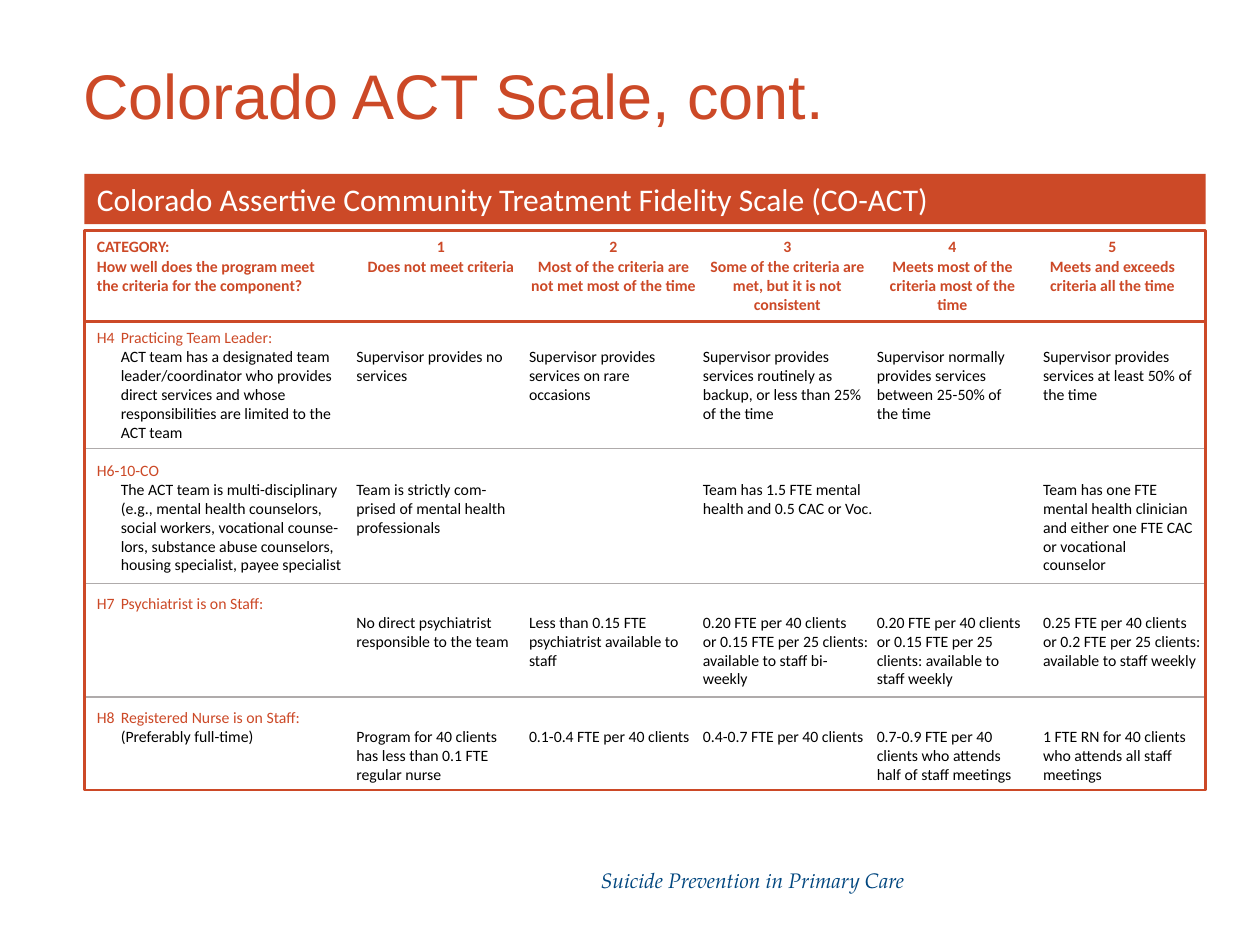
"""Build the Colorado ACT Scale slide with its tabbed fidelity table."""
from itertools import zip_longest

from lxml import etree
from pptx import Presentation
from pptx import util as u
from pptx.dml.color import RGBColor
from pptx.enum import shapes, text
from pptx.oxml.ns import qn

RUST = RGBColor(0xCC, 0x49, 0x27)
GRAY = RGBColor(0xAF, 0xAB, 0xAB)
NAVY = RGBColor(0x00, 0x46, 0x7F)
BLACK = RGBColor(0, 0, 0)
WHITE = RGBColor(255, 255, 255)

TITLE = "Colorado ACT Scale, cont."
BANNER = "Colorado Assertive Community Treatment Fidelity Scale (CO-ACT)"
FOOTER = "Suicide Prevention in Primary Care"
HEADER = [
    ["CATEGORY:", "How well does the program meet", "the criteria for the component?"],
    ["1", "Does not meet criteria"],
    ["2", "Most of the criteria are", "not met most of the time"],
    ["3", "Some of the criteria are", "met, but it is not", "consistent"],
    ["4", "Meets most of the", "criteria most of the", "time"],
    ["5", "Meets and exceeds", "criteria all the time"],
]
ITEMS = [
    ("H4\tPracticing Team Leader:", [
        ["ACT team has a designated team", "leader/coordinator who provides",
         "direct services and whose", "responsibilities are limited to the", "ACT team"],
        ["Supervisor provides no", "services"],
        ["Supervisor provides", "services on rare", "occasions"],
        ["Supervisor provides", "services routinely as", "backup, or less than 25%",
         "of the time"],
        ["Supervisor normally", "provides services", "between 25-50% of", "the time"],
        ["Supervisor provides", "services at least 50% of", "the time"],
    ]),
    ("H6-10-CO", [
        ["The ACT team is multi-disciplinary", "(e.g., mental health counselors,",
         "social workers, vocational counse-", "lors, substance abuse counselors,",
         "housing specialist, payee specialist"],
        ["Team is strictly com-", "prised of mental health", "professionals"],
        [],
        ["Team has 1.5 FTE mental", "health and 0.5 CAC or Voc."],
        [],
        ["Team has one FTE", "mental health clinician", "and either one FTE CAC",
         "or vocational", "counselor"],
    ]),
    ("H7\tPsychiatrist is on Staff:", [
        [],
        ["No direct psychiatrist", "responsible to the team"],
        ["Less than 0.15 FTE", "psychiatrist available to", "staff"],
        ["0.20 FTE per 40 clients", "or 0.15 FTE per 25 clients:",
         "available to staff bi-", "weekly"],
        ["0.20 FTE per 40 clients", "or 0.15 FTE per 25", "clients: available to",
         "staff weekly"],
        ["0.25 FTE per 40 clients", "or 0.2 FTE per 25 clients:",
         "available to staff weekly"],
    ]),
    ("H8\tRegistered Nurse is on Staff:", [
        ["(Preferably full-time)"],
        ["Program for 40 clients", "has less than 0.1 FTE", "regular nurse"],
        ["0.1-0.4 FTE per 40 clients"],
        ["0.4-0.7 FTE per 40 clients"],
        ["0.7-0.9 FTE per 40", "clients who attends", "half of staff meetings"],
        ["1 FTE RN for 40 clients", "who attends all staff", "meetings"],
    ]),
]
HEADER_TABS = [2.73, 4.1, 5.48, 6.79, 8.06]
ITEM_TABS = [0.19, 2.06, 3.43, 4.81, 6.19, 7.51]
LEFT, WIDTH = 0.67, 8.9
TABLE_TOP, TABLE_HEIGHT = 1.83, 4.44
HEADER_RULE, ITEM_RULES = 2.55, [3.56, 4.63, 5.53]


def tabbed_lines(columns):
    """Join the columns line by line with tabs."""
    return ["\t".join(cells).rstrip() for cells in zip_longest(*columns, fillvalue="")]


def style(p, size, color, font="Calibri", bold=None, italic=None):
    """Format every run of a paragraph."""
    for r in p.runs:
        f = r.font
        f.size, f.name, f.bold, f.italic = u.Pt(size), font, bold, italic
        f.color.rgb = color


def set_tabs(p, stops, align):
    """Give a paragraph its tab stops."""
    tabs = etree.SubElement(p._p.get_or_add_pPr(), qn("a:tabLst"))
    for stop in stops:
        etree.SubElement(tabs, qn("a:tab"), pos=str(u.Inches(stop)), algn=align)


def add_box(slide, left, top, width, height, wrap=True):
    """Add a text box and return its text frame."""
    tf = slide.shapes.add_textbox(*map(u.Inches, (left, top, width, height))).text_frame
    tf.word_wrap = wrap
    tf.auto_size = text.MSO_AUTO_SIZE.SHAPE_TO_FIT_TEXT
    return tf


def add_rect(slide, top, height):
    """Add a full-width rectangle without shadow."""
    sp = slide.shapes.add_shape(
        shapes.MSO_SHAPE.RECTANGLE, *map(u.Inches, (LEFT, top, WIDTH, height)))
    sp.shadow.inherit = False
    return sp


def add_rule(slide, y, color, weight):
    """Add a full-width horizontal line."""
    line = slide.shapes.add_connector(
        shapes.MSO_CONNECTOR.STRAIGHT, *map(u.Inches, (LEFT, y, LEFT + WIDTH, y)))
    line.line.color.rgb, line.line.width = color, u.Pt(weight)
    etree.SubElement(line._element.spPr, qn("a:effectLst"))


def add_title(slide):
    """Fill and place the title."""
    title = slide.shapes.title
    title.left, title.top, title.width, title.height = map(u.Inches, (0.56, 0.3, 8.9, 0.97))
    tf = title.text_frame
    tf.text, tf.vertical_anchor = TITLE, text.MSO_ANCHOR.MIDDLE
    p = tf.paragraphs[0]
    p.alignment, p.line_spacing = text.PP_ALIGN.LEFT, 0.9
    style(p, 36, RUST, "Arial")


def add_banner(slide):
    """Add the coloured heading bar."""
    sp = add_rect(slide, 1.38, 0.4)
    sp.fill.solid()
    sp.fill.fore_color.rgb = RUST
    sp.line.fill.background()
    tf = sp.text_frame
    tf.text, tf.vertical_anchor = BANNER, text.MSO_ANCHOR.TOP
    tf.word_wrap = True
    tf.paragraphs[0].alignment = text.PP_ALIGN.LEFT
    style(tf.paragraphs[0], 18, WHITE)


def add_header(slide):
    """Add the rating headings."""
    tf = add_box(slide, LEFT, TABLE_TOP, 8.79, 0.71)
    first, *rest = tabbed_lines(HEADER)
    for i, line in enumerate([first, "\n".join(rest)]):
        p = tf.add_paragraph() if i else tf.paragraphs[0]
        p.text, p.line_spacing = line, u.Pt(11)
        set_tabs(p, HEADER_TABS, "ctr")
        style(p, 9, RUST, bold=True)


def add_items(slide):
    """Add the scale items, one label and its tabbed lines each."""
    tf = add_box(slide, LEFT, HEADER_RULE, 8.99, 3.89)
    for i, (label, columns) in enumerate(ITEMS):
        for j, line in enumerate([label] + ["\t" + s for s in tabbed_lines(columns)]):
            p = tf.add_paragraph() if i or j else tf.paragraphs[0]
            p.text = line
            if i and not j:
                p.space_before = u.Pt(11)
            set_tabs(p, ITEM_TABS, "l")
            style(p, 9, BLACK if j else RUST)


def main():
    """Build and save the slide."""
    prs = Presentation()
    prs.slide_width, prs.slide_height = u.Inches(10), u.Inches(7.5)
    slide = prs.slides.add_slide(prs.slide_layouts[5])
    tf = add_box(slide, 4.67, 6.84, 2.64, 0.3, wrap=False)
    tf.text = FOOTER
    style(tf.paragraphs[0], 12, NAVY, "TeX Gyre Pagella", italic=True)
    add_title(slide)
    add_banner(slide)
    add_header(slide)
    add_items(slide)
    add_rule(slide, HEADER_RULE, RUST, 1.5)
    for y in ITEM_RULES:
        add_rule(slide, y, GRAY, 1)
    frame = add_rect(slide, TABLE_TOP, TABLE_HEIGHT)
    frame.fill.background()
    frame.line.color.rgb, frame.line.width = RUST, u.Pt(1.5)
    prs.save("out.pptx")


if __name__ == "__main__":
    main()
